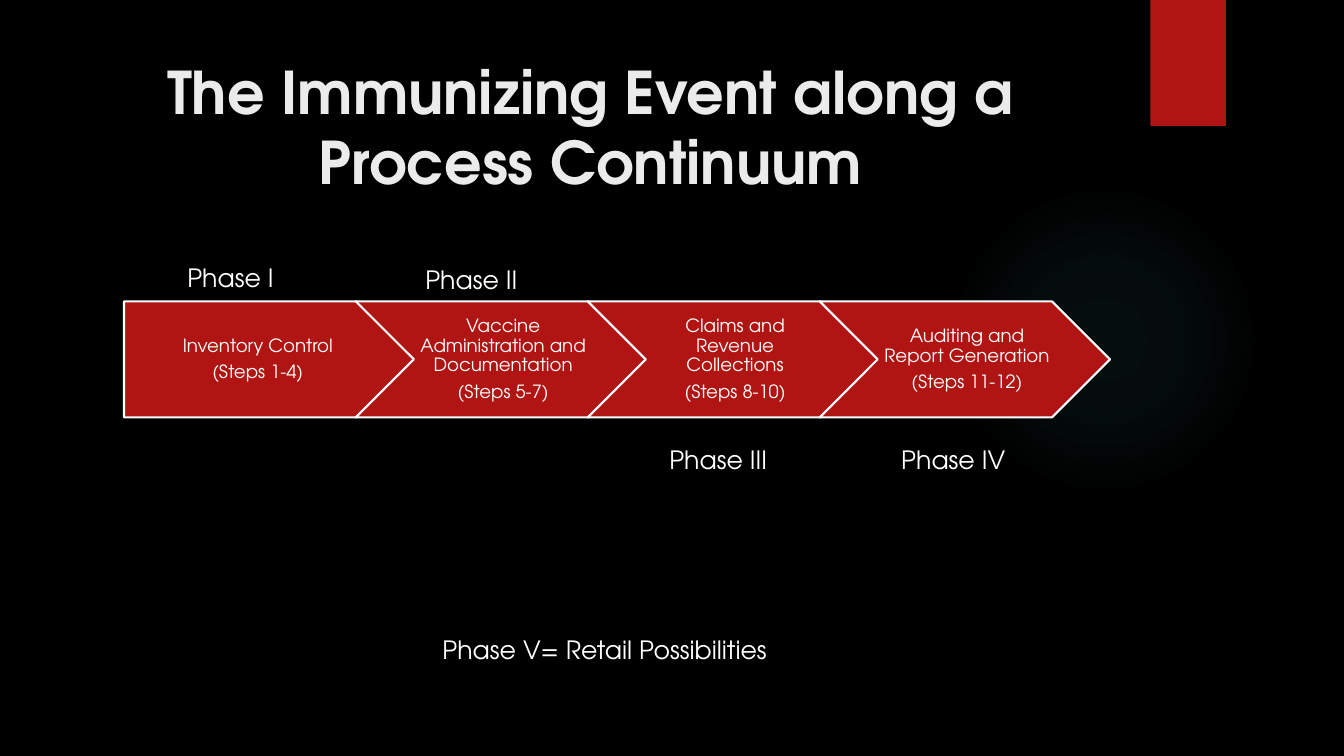
import pptx
import pptx.dml.color
import pptx.enum.shapes
import pptx.enum.text
import pptx.oxml
import pptx.util
from pptx.util import Inches

RGBColor = pptx.dml.color.RGBColor
MSO_SHAPE = pptx.enum.shapes.MSO_SHAPE
MSO_ANCHOR = pptx.enum.text.MSO_ANCHOR
PP_ALIGN = pptx.enum.text.PP_ALIGN

BLACK = RGBColor(0x00, 0x00, 0x00)
WHITE = RGBColor(0xFF, 0xFF, 0xFF)
TITLE_GREY = RGBColor(0xEB, 0xEB, 0xEB)
RED = RGBColor(0xB0, 0x15, 0x13)
GLOW_TEAL = RGBColor(0x50, 0xB9, 0xC1)

STEPS = [
    ("Inventory Control", "(Steps 1-4)"),
    ("Vaccine Administration and Documentation", "(Steps 5-7)"),
    ("Claims and Revenue Collections", "(Steps 8-10)"),
    ("Auditing and Report Generation", "(Steps 11-12)"),
]
PHASE_LABELS = [
    ("Phase I", 1.76, 2.55, 1.07),
    ("Phase II", 4.12, 2.57, 1.13),
    ("Phase III", 6.54, 4.36, 1.18),
    ("Phase IV", 8.84, 4.36, 1.25),
    ("Phase V= Retail Possibilities", 4.29, 6.24, 3.44),
]


class SlideBuilder:
    font_name = "TeX Gyre Adventor"

    def __init__(self, slide):
        self.slide = slide
        slide.background.fill.solid()
        slide.background.fill.fore_color.rgb = BLACK

    def add_run(self, paragraph, text, size, color=WHITE, bold=False):
        run = paragraph.add_run()
        run.text = text
        run.font.name = self.font_name
        run.font.size = pptx.util.Pt(size)
        run.font.bold = bold
        run.font.color.rgb = color

    def add_block(self, preset, left, top, width, height):
        shape = self.slide.shapes.add_shape(
            preset, Inches(left), Inches(top), Inches(width), Inches(height))
        shape.shadow.inherit = False
        shape.fill.solid()
        shape.fill.fore_color.rgb = RED
        shape.line.fill.background()
        return shape

    def add_glow(self, left, top, diameter, stops):
        shape = self.add_block(MSO_SHAPE.OVAL, left, top, diameter, diameter)
        stop_xml = "".join(
            f'<a:gs pos="{position * 1000}"><a:srgbClr val="{GLOW_TEAL}">'
            f'<a:alpha val="{alpha * 1000}"/></a:srgbClr></a:gs>'
            for position, alpha in stops)
        gradient = pptx.oxml.parse_xml(
            '<a:gradFill xmlns:a="http://schemas.openxmlformats.org/drawingml/2006/main"'
            f' rotWithShape="1"><a:gsLst>{stop_xml}</a:gsLst><a:path path="circle">'
            '<a:fillToRect l="50000" t="50000" r="50000" b="50000"/></a:path></a:gradFill>')
        properties = shape.fill._xPr
        properties.replace(properties.solidFill, gradient)

    def add_step(self, preset, left, top, width, height, lines, left_inset):
        shape = self.add_block(preset, left, top, width, height)
        shape.line.color.rgb = WHITE
        shape.line.width = pptx.util.Pt(1.5)
        frame = shape.text_frame
        frame.word_wrap = True
        frame.vertical_anchor = MSO_ANCHOR.MIDDLE
        frame.margin_left, frame.margin_right = Inches(left_inset), Inches(0.02)
        frame.margin_top = frame.margin_bottom = Inches(0.04)
        for index, line in enumerate(lines):
            paragraph = frame.add_paragraph() if index else frame.paragraphs[0]
            paragraph.alignment = PP_ALIGN.CENTER
            paragraph.line_spacing = 0.9
            paragraph.space_after = pptx.util.Pt(4.55)
            self.add_run(paragraph, line, 13)

    def add_text(self, text, left, top, width, height, size, color=WHITE,
                 bold=False, align=PP_ALIGN.LEFT, wrap=False):
        box = self.slide.shapes.add_textbox(
            Inches(left), Inches(top), Inches(width), Inches(height))
        box.text_frame.word_wrap = wrap
        paragraph = box.text_frame.paragraphs[0]
        paragraph.alignment = align
        self.add_run(paragraph, text, size, color, bold)


def main():
    presentation = pptx.Presentation()
    presentation.slide_width = Inches(13.33)
    presentation.slide_height = Inches(7.5)
    builder = SlideBuilder(presentation.slides.add_slide(presentation.slide_layouts[6]))

    # Background decoration
    builder.add_glow(9.41, 1.83, 3.08, [(0, 7), (36, 6), (69, 0)])
    builder.add_block(MSO_SHAPE.RECTANGLE, 11.41, 0, 0.75, 1.25)

    # Title
    builder.add_text("The Immunizing Event along a Process Continuum",
                     0.71, 0.5, 10.29, 1.53, 42, TITLE_GREY, True,
                     PP_ALIGN.CENTER, True)

    # Process arrows, evenly spaced
    for index, lines in enumerate(STEPS):
        preset = MSO_SHAPE.CHEVRON if index else MSO_SHAPE.PENTAGON
        left_inset = 0.06 if index else 0.08
        builder.add_step(preset, 1.23 + 2.3 * index, 2.99, 2.88, 1.15, lines, left_inset)

    # Phase labels
    for text, left, top, width in PHASE_LABELS:
        builder.add_text(text, left, top, width, 0.4, 18)

    presentation.save("out.pptx")


if __name__ == "__main__":
    main()
